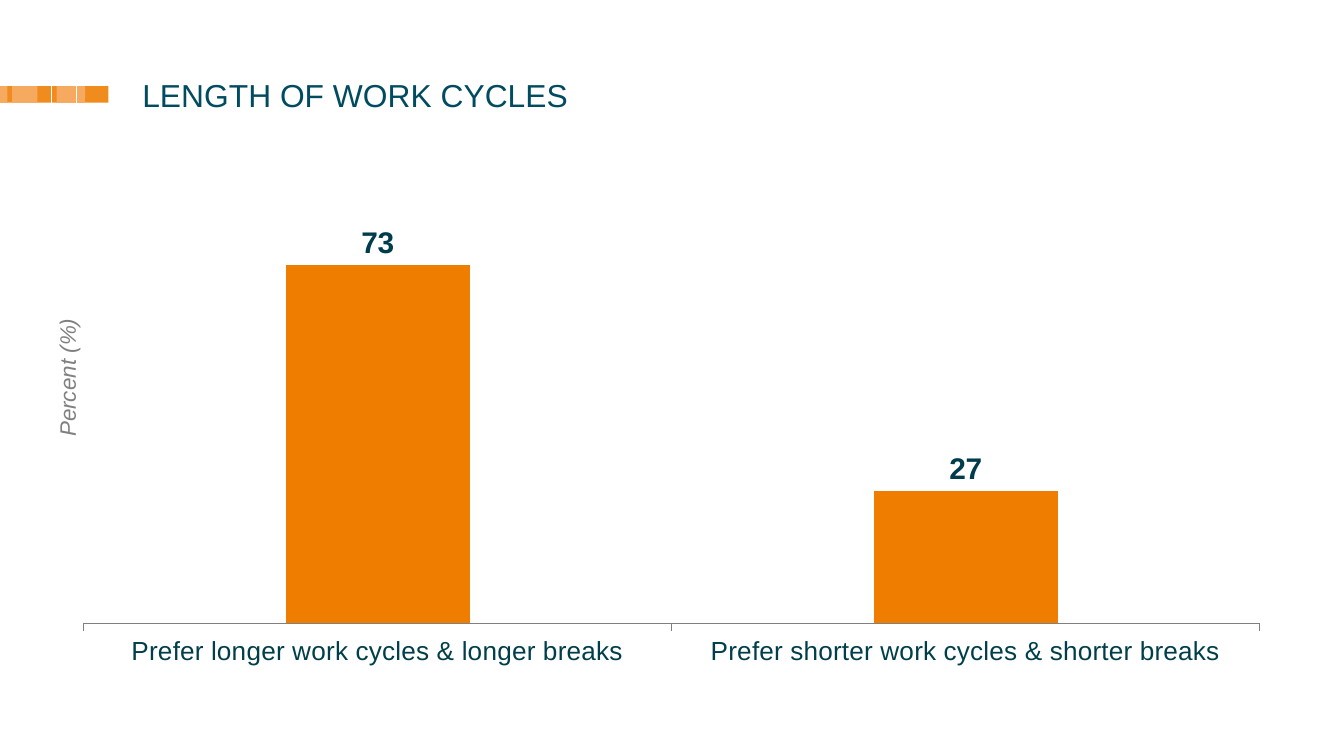
from lxml import etree
from pptx import Presentation
from pptx.chart.data import CategoryChartData
from pptx.dml.color import RGBColor
from pptx.enum.chart import XL_CHART_TYPE, XL_LABEL_POSITION, XL_TICK_LABEL_POSITION, XL_TICK_MARK
from pptx.enum.shapes import MSO_CONNECTOR, MSO_SHAPE
from pptx.enum.text import PP_ALIGN
from pptx.oxml.ns import qn
from pptx.util import Cm, Pt

ORANGE = RGBColor(0xEF, 0x7D, 0x00)
BAND = RGBColor(0xF0, 0x8B, 0x1D)
LIGHT_BAND = RGBColor(0xF6, 0xAA, 0x5F)
TITLE_BLUE = RGBColor(0x00, 0x4B, 0x60)
AXIS_TEXT = RGBColor(0x00, 0x3F, 0x4A)
LABEL_TEXT = RGBColor(0x00, 0x3C, 0x4C)
GREY = RGBColor(0x80, 0x80, 0x80)
WHITE = RGBColor(0xFF, 0xFF, 0xFF)

TITLE = "LENGTH OF WORK CYCLES"
AXIS_TITLE = "Percent (%)"
SHARES = {
    "Prefer longer work cycles & longer breaks": 73,
    "Prefer shorter work cycles & shorter breaks": 27,
}

# Title marker, in cm: bars as (left, width, colour), then the dividers
MARKER_TOP, MARKER_HEIGHT = 1.63, 0.31
MARKER_BARS = [(0, 2.05, BAND), (1.07, 0.54, LIGHT_BAND),
               (0.23, 0.48, LIGHT_BAND), (0, 0.14, LIGHT_BAND)]
MARKER_DIVIDERS = [0.97, 1.45]

# Inner plot area as fractions of the chart
PLOT = {"x": 0.017, "y": 0.116, "w": 0.966, "h": 0.738}


def set_font(font, color, **values):
    font.name = "Arial"
    font.color.rgb = color
    for name, value in values.items():
        setattr(font, name, value)


def add_marker(s):
    for left, width, color in MARKER_BARS:
        bar = s.shapes.add_shape(MSO_SHAPE.RECTANGLE, Cm(left), Cm(MARKER_TOP),
                                 Cm(width), Cm(MARKER_HEIGHT))
        bar.shadow.inherit = False
        bar.fill.solid()
        bar.fill.fore_color.rgb = color
        bar.line.fill.background()
    for x in MARKER_DIVIDERS:
        line = s.shapes.add_connector(MSO_CONNECTOR.STRAIGHT, Cm(x), Cm(MARKER_TOP),
                                      Cm(x), Cm(MARKER_TOP + MARKER_HEIGHT))
        line.line.color.rgb = WHITE
        line.line.width = Pt(0.63)
        etree.SubElement(line._element.spPr, qn("a:effectLst"))


def add_text(s, text, box, color, align=PP_ALIGN.LEFT, **font):
    sp = s.shapes.add_textbox(*map(Cm, box))
    tf = sp.text_frame
    tf.word_wrap = True
    for side in ("left", "top", "right", "bottom"):
        setattr(tf, f"margin_{side}", 0)
    p = tf.paragraphs[0]
    for name, value in {"alignment": align, "line_spacing": 0.85, "space_after": Pt(12)}.items():
        setattr(p, name, value)
    r = p.add_run()
    r.text = text
    set_font(r.font, color, **font)
    return tf


def fix_plot_area(chart):
    plot_area = chart._chartSpace.chart.plotArea
    for old in plot_area.findall(qn("c:layout")):
        plot_area.remove(old)
    layout = etree.Element(qn("c:layout"))
    manual = etree.SubElement(layout, qn("c:manualLayout"))
    settings = {"layoutTarget": "inner", "xMode": "edge", "yMode": "edge", **PLOT}
    for tag, value in settings.items():
        etree.SubElement(manual, qn(f"c:{tag}")).set("val", str(value))
    plot_area.insert(0, layout)


def add_share_chart(s):
    data = CategoryChartData(number_format="0")
    data.categories = list(SHARES)
    data.add_series("Series 1", list(SHARES.values()))
    chart = s.shapes.add_chart(XL_CHART_TYPE.COLUMN_CLUSTERED, Cm(1.19), Cm(2.11),
                               Cm(23.01), Cm(11.33), data).chart
    chart.has_legend = chart.has_title = False
    set_font(chart.font, AXIS_TEXT, size=Pt(14))

    axis = chart.value_axis
    for name, value in {"minimum_scale": 0, "maximum_scale": 90, "major_unit": 10,
                        "has_major_gridlines": False, "visible": False}.items():
        setattr(axis, name, value)
    axis = chart.category_axis
    axis.major_tick_mark = XL_TICK_MARK.OUTSIDE
    axis.tick_label_position = XL_TICK_LABEL_POSITION.LOW
    axis.format.line.color.rgb = GREY
    axis.format.line.width = Pt(0.75)

    plot = chart.plots[0]
    for name, value in {"gap_width": 220, "overlap": -8, "vary_by_categories": False,
                        "has_data_labels": True}.items():
        setattr(plot, name, value)
    fill = plot.series[0].format.fill
    fill.solid()
    fill.fore_color.rgb = ORANGE
    labels = plot.data_labels
    for name, value in {"show_value": True, "position": XL_LABEL_POSITION.OUTSIDE_END,
                        "number_format": "0", "number_format_is_linked": False}.items():
        setattr(labels, name, value)
    set_font(labels.font, LABEL_TEXT, size=Pt(16), bold=True)
    fix_plot_area(chart)


def main():
    prs = Presentation()
    prs.slide_width, prs.slide_height = Cm(25.4), Cm(14.29)
    s = prs.slides.add_slide(prs.slide_layouts[6])
    add_marker(s)
    add_text(s, TITLE, (2.69, 1.55, 21.01, 1.27), TITLE_BLUE, size=Pt(17))
    add_share_chart(s)
    tf = add_text(s, AXIS_TITLE, (1.09, 5.69, 0.79, 2.9), GREY,
                  PP_ALIGN.CENTER, size=Pt(12), italic=True)
    tf._txBody.bodyPr.set("vert", "vert270")
    prs.save("out.pptx")


if __name__ == "__main__":
    main()
